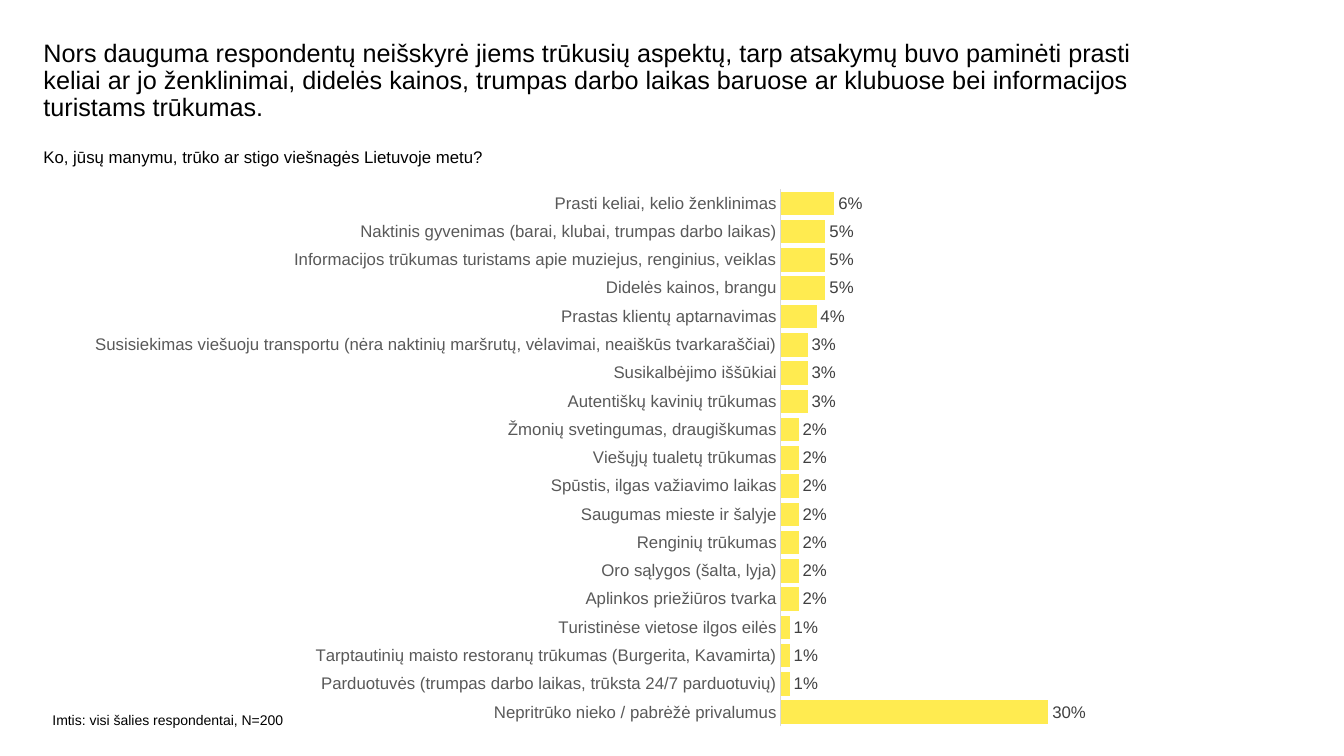
from lxml import etree
from pptx import Presentation
from pptx import util as u
from pptx.chart import data as chart_data
from pptx.dml import color
from pptx.enum import chart as kinds
from pptx.enum import text

CHART_NS = "http://schemas.openxmlformats.org/drawingml/2006/chart"

TITLE = ("Nors dauguma respondentų neišskyrė jiems trūkusių aspektų, tarp atsakymų "
         "buvo paminėti prasti keliai ar jo ženklinimai, didelės kainos, trumpas darbo "
         "laikas baruose ar klubuose bei informacijos turistams trūkumas.")
QUESTION = "Ko, jūsų manymu, trūko ar stigo viešnagės Lietuvoje metu?"
SAMPLE = "Imtis: visi šalies respondentai, N=200"

ANSWERS = [
    ("Prasti keliai, kelio ženklinimas", 6),
    ("Naktinis gyvenimas (barai, klubai, trumpas darbo laikas)", 5),
    ("Informacijos trūkumas turistams apie muziejus, renginius, veiklas", 5),
    ("Didelės kainos, brangu", 5),
    ("Prastas klientų aptarnavimas", 4),
    ("Susisiekimas viešuoju transportu (nėra naktinių maršrutų, vėlavimai, "
     "neaiškūs tvarkaraščiai)", 3),
    ("Susikalbėjimo iššūkiai", 3),
    ("Autentiškų kavinių trūkumas", 3),
    ("Žmonių svetingumas, draugiškumas", 2),
    ("Viešųjų tualetų trūkumas", 2),
    ("Spūstis, ilgas važiavimo laikas", 2),
    ("Saugumas mieste ir šalyje", 2),
    ("Renginių trūkumas", 2),
    ("Oro sąlygos (šalta, lyja)", 2),
    ("Aplinkos priežiūros tvarka", 2),
    ("Turistinėse vietose ilgos eilės", 1),
    ("Tarptautinių maisto restoranų trūkumas (Burgerita, Kavamirta)", 1),
    ("Parduotuvės (trumpas darbo laikas, trūksta 24/7 parduotuvių)", 1),
    ("Nepritrūko nieko / pabrėžė privalumus", 30),
]


def rgb(value):
    """Turn a hex string into a colour."""
    return color.RGBColor.from_string(value)


def assign(target, values):
    """Set every attribute named in a dict of format values."""
    for name, value in values.items():
        setattr(target, name, value)


class SurveySlide:
    """Holds the style and the current slide; areas are percentages of its size."""

    font_name = "Arial"
    ink, label_ink, value_ink = "000000", "595959", "404040"
    axis_line, bar_fill = "D9D9D9", "FFEB50"
    frame = dict(margin_left=0, margin_top=0, margin_right=0, margin_bottom=0,
                 word_wrap=True, auto_size=text.MSO_AUTO_SIZE.NONE,
                 vertical_anchor=text.MSO_ANCHOR.TOP)

    def __init__(self, deck):
        self.deck = deck
        self.page = deck.slides.add_slide(deck.slide_layouts[5])

    def area(self, left, top, width, height):
        """Convert percentages of the slide into lengths."""
        across, down = self.deck.slide_width / 100, self.deck.slide_height / 100
        return [u.Emu(round(length)) for length in
                (left * across, top * down, width * across, height * down)]

    def style(self, font, size, ink):
        """Apply the typeface, size and colour."""
        assign(font, dict(name=self.font_name, size=u.Pt(size), bold=False))
        font.color.rgb = rgb(ink)

    def fill_box(self, box, words, size, spacing=1.0):
        """Fill a box with one left-aligned paragraph."""
        assign(box.text_frame, self.frame)
        para = box.text_frame.paragraphs[0]
        assign(para, dict(alignment=text.PP_ALIGN.LEFT, line_spacing=spacing))
        span = para.add_run()
        span.text = words
        self.style(span.font, size, self.ink)

    def title(self, words, area, size):
        """Place and fill the title placeholder."""
        box = self.page.shapes.title
        assign(box, dict(zip(("left", "top", "width", "height"), self.area(*area))))
        self.fill_box(box, words, size, 0.9)

    def label(self, words, area, size):
        """Add a text box."""
        self.fill_box(self.page.shapes.add_textbox(*self.area(*area)), words, size)

    def bars(self, answers, area, plot):
        """Add a bar chart whose first answer stands at the top."""
        data = chart_data.CategoryChartData(number_format="0%")
        rows = answers[::-1]
        data.categories = [answer for answer, _ in rows]
        data.add_series("Series 1", [percent / 100 for _, percent in rows])
        chart = self.page.shapes.add_chart(
            kinds.XL_CHART_TYPE.BAR_CLUSTERED, *self.area(*area), data).chart
        assign(chart, dict(has_legend=False, has_title=False))
        self.style(chart.font, 10, self.ink)
        self.format_axes(chart)
        self.format_bars(chart.plots[0])
        self.fix_plot(chart, plot)

    def format_axes(self, chart):
        """Show the answers and hide the value scale."""
        none = kinds.XL_TICK_MARK.NONE
        assign(chart.category_axis, dict(major_tick_mark=none, minor_tick_mark=none,
                                         has_major_gridlines=False))
        self.style(chart.category_axis.tick_labels.font, 12, self.label_ink)
        line = chart.category_axis.format.line
        line.width = u.Pt(0.75)
        line.color.rgb = rgb(self.axis_line)
        assign(chart.value_axis, dict(visible=False, has_major_gridlines=False,
                                      minimum_scale=0, maximum_scale=0.35))

    def format_bars(self, plot):
        """Colour the bars and label their ends."""
        assign(plot, dict(gap_width=20, vary_by_categories=False, has_data_labels=True))
        assign(plot.data_labels, dict(
            show_value=True, number_format="0%", number_format_is_linked=False,
            position=kinds.XL_LABEL_POSITION.OUTSIDE_END))
        self.style(plot.data_labels.font, 12, self.value_ink)
        fill = plot.series[0].format.fill
        fill.solid()
        fill.fore_color.rgb = rgb(self.bar_fill)

    def fix_plot(self, chart, plot):
        """Pin the inner plot area to shares of the chart."""
        tag = f"{{{CHART_NS}}}"
        plot_area = chart.plots[0]._element.getparent()
        for old in plot_area.findall(tag + "layout"):
            plot_area.remove(old)
        layout = etree.Element(tag + "layout")
        manual = etree.SubElement(layout, tag + "manualLayout")
        settings = [("layoutTarget", "inner"), ("xMode", "edge"), ("yMode", "edge")]
        for name, value in settings + list(zip("xywh", plot)):
            etree.SubElement(manual, tag + name, val=str(value))
        plot_area.insert(0, layout)


def main():
    """Build and save the survey slide."""
    deck = Presentation()
    assign(deck, dict(slide_width=u.Inches(13.33), slide_height=u.Inches(7.5)))
    slide = SurveySlide(deck)
    slide.title(TITLE, (3.23, 5.33, 84.4, 8), 18)
    slide.label(QUESTION, (3.23, 19.47, 89.35, 3.33), 12)
    slide.label(SAMPLE, (3.9, 94.1, 28.96, 3.6), 10)
    slide.bars(ANSWERS, (5.33, 22.8, 105.55, 74.8), (0.5, 0.03, 0.22, 0.95))
    deck.save("out.pptx")


if __name__ == "__main__":
    main()
